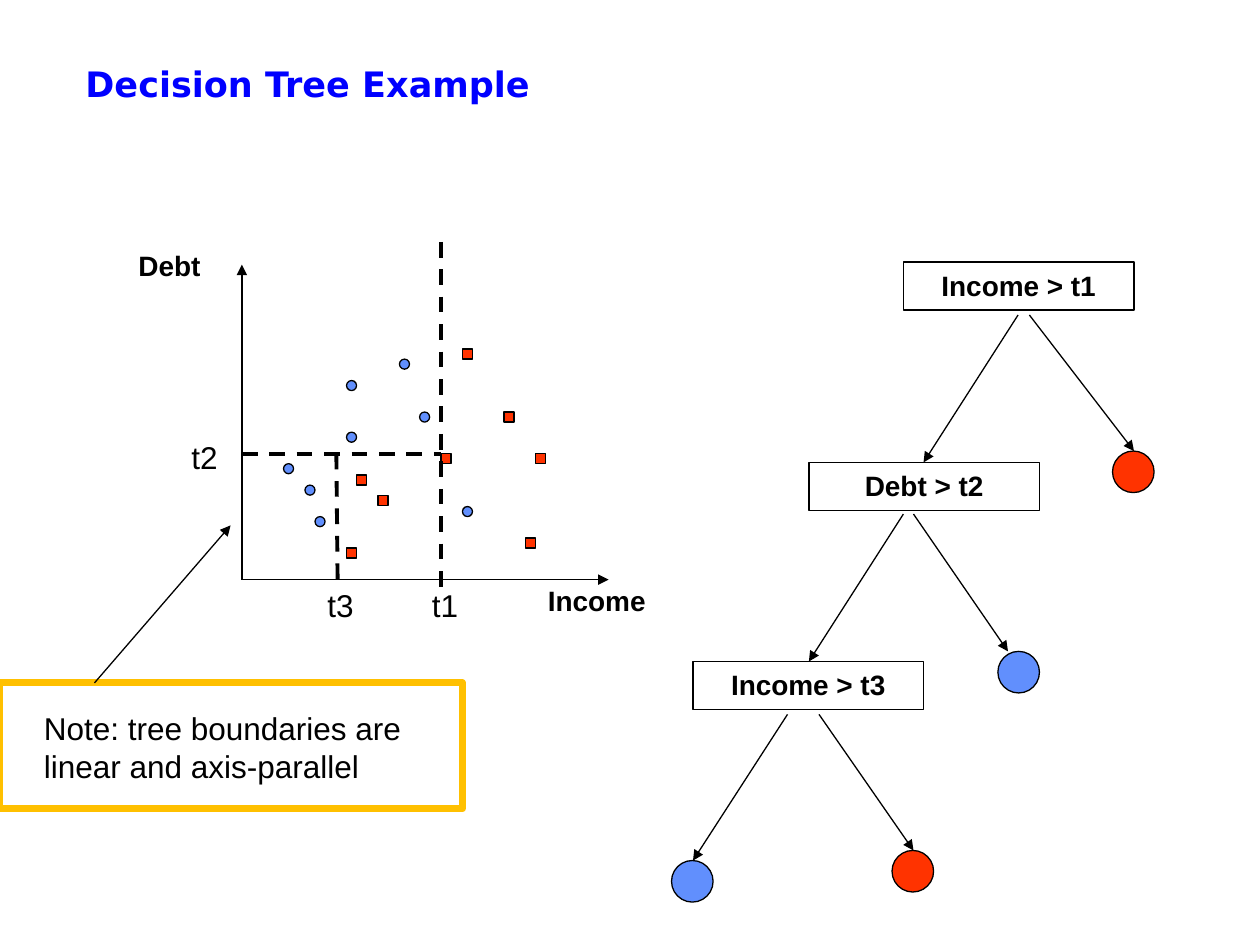
from pptx import Presentation
from pptx.dml.color import RGBColor
from pptx.enum.dml import MSO_LINE
from pptx.enum.shapes import MSO_CONNECTOR, MSO_SHAPE
from pptx.enum.text import MSO_ANCHOR, PP_ALIGN
from pptx.oxml.ns import qn
from pptx.util import Inches, Pt
from lxml.etree import SubElement

BLACK, BLUE, RED = "000000", "618FFD", "FF3300"
DOT, LEAF = 0.08, 0.33
NODE_WIDTH, NODE_HEIGHT = 1.83, 0.38

LOW_RISK = [(2.25, 3.68), (2.42, 3.85), (2.75, 3.02), (3.17, 2.85),
            (2.75, 3.43), (3.33, 3.27), (2.5, 4.1), (3.67, 4.02)]
HIGH_RISK = [(2.83, 3.77), (3, 3.93), (3.5, 3.6), (4, 3.27),
             (3.67, 2.77), (2.75, 4.35), (4.17, 4.27), (4.25, 3.6)]
AXES = [((1.92, 4.6), (4.83, 4.6)), ((1.92, 4.6), (1.92, 2.1))]
BOUNDARIES = [((3.5, 1.92), (3.5, 4.67)),
              ((1.92, 3.6), (3.5, 3.6)),
              ((2.67, 3.6), (2.68, 4.66))]
THRESHOLDS = [("t1", 3.33, 4.6), ("t3", 2.5, 4.6), ("t2", 1.42, 3.43)]
AXIS_NAMES = [("Income", 4.25, 4.58, 0.98), ("Debt", 1, 1.92, 0.69)]
NODES = [("Income > t1", 7.17, 2.08),
         ("Debt > t2", 6.42, 3.67),
         ("Income > t3", 5.5, 5.25)]
BRANCHES = [((8.17, 2.5), (9, 3.58)), ((8.08, 2.5), (7.33, 3.67)),
            ((7.25, 4.08), (8, 5.17)), ((7.17, 4.08), (6.42, 5.25)),
            ((6.5, 5.67), (7.25, 6.75)), ((6.25, 5.67), (5.5, 6.83))]
LEAVES = [(8.83, 3.58, RED), (7.92, 5.17, BLUE),
          (5.33, 6.83, BLUE), (7.08, 6.75, RED)]


def rgb(color):
    return RGBColor.from_string(color)


def add_outlined(slide, preset, left, top, width, height,
                 fill=None, color=BLACK, weight=0.75):
    shape = slide.shapes.add_shape(
        preset, Inches(left), Inches(top), Inches(width), Inches(height))
    shape.shadow.inherit = False
    if fill:
        shape.fill.solid()
        shape.fill.fore_color.rgb = rgb(fill)
    else:
        shape.fill.background()
    shape.line.color.rgb = rgb(color)
    shape.line.width = Pt(weight)
    return shape


def add_line(slide, start, end, weight=0.75, arrow=True):
    """Draw an arrow, or a dashed line when arrow is False."""
    x1, y1, x2, y2 = (Inches(value) for value in (*start, *end))
    line = slide.shapes.add_connector(MSO_CONNECTOR.STRAIGHT, x1, y1, x2, y2)
    line.line.color.rgb = rgb(BLACK)
    line.line.width = Pt(weight)
    if arrow:
        SubElement(line.line._get_or_add_ln(), qn("a:tailEnd"), type="triangle")
    else:
        line.line.dash_style = MSO_LINE.DASH
    SubElement(line._element.spPr, qn("a:effectLst"))


def write(frame, lines, size, bold=False, color=BLACK, font="Arial",
          align=PP_ALIGN.LEFT):
    for index, text in enumerate(lines):
        paragraph = frame.add_paragraph() if index else frame.paragraphs[0]
        paragraph.alignment = align
        run = paragraph.add_run()
        run.text = text
        run.font.name = font
        run.font.size = Pt(size)
        run.font.bold = bold
        run.font.color.rgb = rgb(color)


def add_label(slide, lines, left, top, width, height, size, wrap=False,
              anchor=MSO_ANCHOR.TOP, **style):
    box = slide.shapes.add_textbox(
        Inches(left), Inches(top), Inches(width), Inches(height))
    box.text_frame.word_wrap = wrap
    box.text_frame.vertical_anchor = anchor
    write(box.text_frame, lines, size, **style)


def add_node(slide, test, left, top):
    node = add_outlined(slide, MSO_SHAPE.RECTANGLE, left, top,
                        NODE_WIDTH, NODE_HEIGHT)
    node.text_frame.word_wrap = True
    node.text_frame.vertical_anchor = MSO_ANCHOR.TOP
    write(node.text_frame, [test], 16, bold=True, align=PP_ALIGN.CENTER)


def add_scatter(slide):
    for start, end in AXES:
        add_line(slide, start, end)
    for preset, fill, points in ((MSO_SHAPE.OVAL, BLUE, LOW_RISK),
                                 (MSO_SHAPE.RECTANGLE, RED, HIGH_RISK)):
        for left, top in points:
            add_outlined(slide, preset, left, top, DOT, DOT, fill)
    for start, end in BOUNDARIES:
        add_line(slide, start, end, weight=2.25, arrow=False)
    for name, left, top in THRESHOLDS:
        add_label(slide, [name], left, top, 0.41, 0.4, 18)
    for name, left, top, width in AXIS_NAMES:
        add_label(slide, [name], left, top, width, 0.37, 16, bold=True)


def add_tree(slide):
    for test, left, top in NODES:
        add_node(slide, test, left, top)
    for start, end in BRANCHES:
        add_line(slide, start, end)
    for left, top, fill in LEAVES:
        add_outlined(slide, MSO_SHAPE.OVAL, left, top, LEAF, LEAF, fill)


def add_note(slide):
    add_outlined(slide, MSO_SHAPE.RECTANGLE, 0, 5.42, 3.67, 1,
                 color="FFC000", weight=4)
    add_label(slide, ["Note: tree boundaries are", "linear and axis-parallel"],
              0.25, 5.58, 3.17, 0.7, 18)
    add_line(slide, (0.75, 5.42), (1.83, 4.17))


def main():
    deck = Presentation()
    deck.slide_width, deck.slide_height = Inches(10), Inches(7.5)
    slide = deck.slides.add_slide(deck.slide_layouts[6])
    add_label(slide, ["Decision Tree Example"], 0.58, 0.33, 8.5, 0.67, 20,
              wrap=True, anchor=MSO_ANCHOR.MIDDLE, bold=True,
              color="0000FF", font="DejaVu Sans")
    add_scatter(slide)
    add_tree(slide)
    add_note(slide)
    deck.save("out.pptx")


if __name__ == "__main__":
    main()
